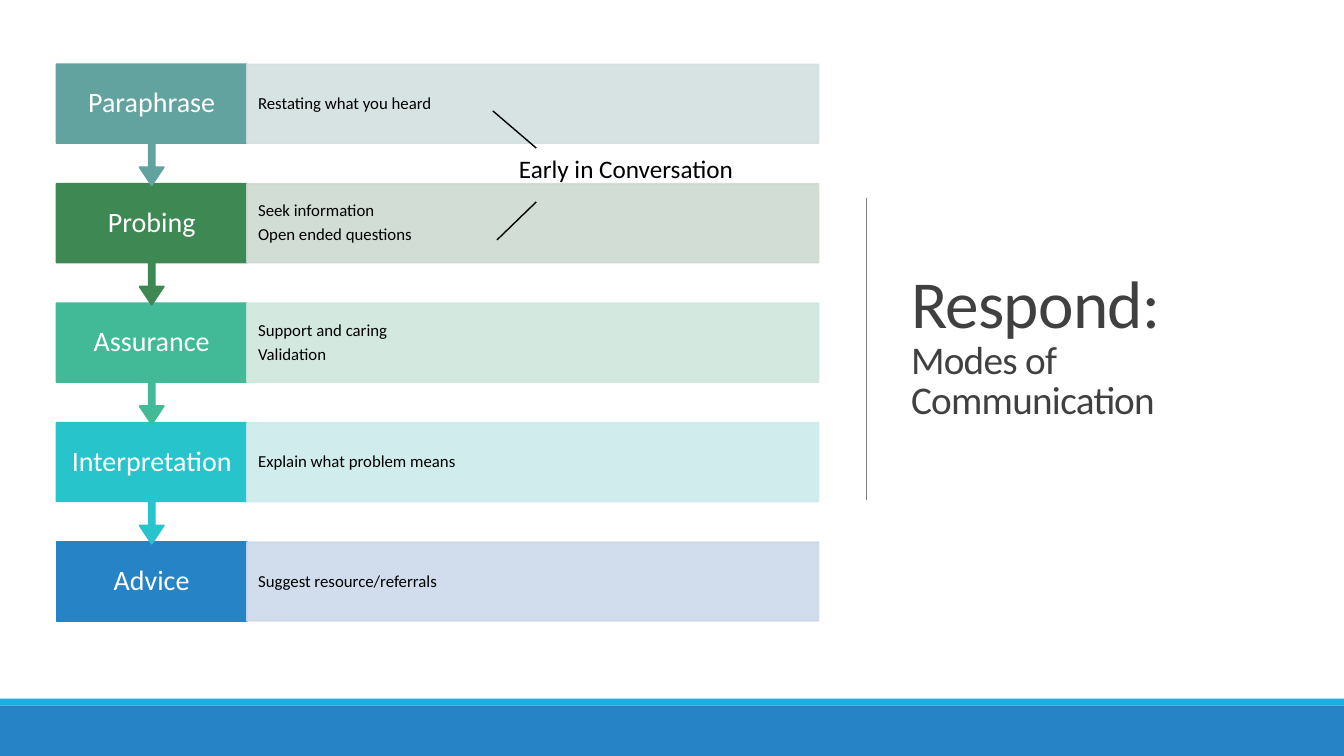
"""Build the slide on modes of communication."""
from lxml import etree
from pptx import Presentation
from pptx import util as u
from pptx.dml import color
from pptx.enum import shapes, text
from pptx.oxml import ns

W, H = 960, 540
FONT = "Calibri"
MODES = [
    ("Paraphrase", ["Restating what you heard"], "62A39F", "D3E0DF"),
    ("Probing", ["Seek information", "Open ended questions"], "3E8853", "CEDAD1"),
    ("Assurance", ["Support and caring", "Validation"], "42BA97", "CFE7DD"),
    ("Interpretation", ["Explain what problem means"], "28C4CC", "CDEAEC"),
    ("Advice", ["Suggest resource/referrals"], "2683C6", "CDD9EA"),
]


def rgb(value):
    """Turn a hex string into a colour."""
    return color.RGBColor.from_string(value)


def add_block(s, kind, box, fill, line=True, alpha=None):
    """Add a filled shape, optionally outlined and translucent."""
    sp = s.shapes.add_shape(kind, *map(u.Pt, box))
    sp.shadow.inherit = False
    sp.fill.solid()
    sp.fill.fore_color.rgb = rgb(fill)
    if line:
        sp.line.color.rgb = rgb(fill)
        sp.line.width = u.Pt(1.25)
    else:
        sp.line.fill.background()
    if alpha:
        for clr in sp._element.spPr.iter(ns.qn("a:srgbClr")):
            etree.SubElement(clr, ns.qn("a:alpha")).set("val", str(alpha * 1000))
    return sp


def add_line(s, start, end, hex_color, width):
    """Draw a straight line between two points."""
    cx = s.shapes.add_connector(
        shapes.MSO_CONNECTOR.STRAIGHT, *map(u.Pt, (*start, *end)))
    cx.line.color.rgb = rgb(hex_color)
    cx.line.width = u.Pt(width)
    etree.SubElement(cx._element.spPr, ns.qn("a:effectLst"))


def add_run(p, content, size, hex_color):
    """Append a formatted run to a paragraph."""
    r = p.add_run()
    r.text = content
    r.font.name = FONT
    r.font.size = u.Pt(size)
    r.font.color.rgb = rgb(hex_color)
    return r


def fill_text(sp, lines, size, hex_color, align, inset_x, inset_y):
    """Write vertically centred paragraphs into a shape."""
    tf = sp.text_frame
    tf.word_wrap = True
    tf.vertical_anchor = text.MSO_ANCHOR.MIDDLE
    tf.margin_left = tf.margin_right = u.Pt(inset_x)
    tf.margin_top = tf.margin_bottom = u.Pt(inset_y)
    for i, content in enumerate(lines):
        p = tf.add_paragraph() if i else tf.paragraphs[0]
        p.alignment = align
        p.line_spacing = 0.9
        p.space_after = u.Pt(size * 0.35)
        add_run(p, content, size, hex_color)


def add_modes(s, x, y, w, h):
    """Stack the modes as labelled callouts with detail bars."""
    label_w, row_h, arrow_h = w / 4, 56.2, 30.2
    pitch = (h - row_h) / (len(MODES) - 1)
    last = len(MODES) - 1
    for i, (label, details, dark, light) in reversed(list(enumerate(MODES))):
        top = y + i * pitch
        if i == last:
            sp = add_block(s, shapes.MSO_SHAPE.RECTANGLE,
                           (x, top, label_w, row_h), dark)
        else:
            sp = add_block(s, shapes.MSO_SHAPE.DOWN_ARROW_CALLOUT,
                           (x, top, label_w, row_h + arrow_h), dark)
            for k, value in enumerate((0.05, 0.1, 0.15, 0.65)):
                sp.adjustments[k] = value
        fill_text(sp, [label], 20, "FFFFFF", text.PP_ALIGN.CENTER, 9.5, 11.4)
        bar = add_block(s, shapes.MSO_SHAPE.RECTANGLE,
                        (x + label_w, top, w - label_w, row_h), light, alpha=90)
        fill_text(bar, details, 12, "000000", text.PP_ALIGN.LEFT, 8, 12)


def add_early_note(s, x, y, w, h):
    """Add the timing note with lines to the first two modes."""
    sp = s.shapes.add_textbox(*map(u.Pt, (x, y, w, h)))
    tf = sp.text_frame
    tf.word_wrap = True
    tf.auto_size = text.MSO_AUTO_SIZE.SHAPE_TO_FIT_TEXT
    add_run(tf.paragraphs[0], "Early in Conversation", 18, "000000")
    add_line(s, (x - 11.6, y - 26.6), (x + 19.5, y), "000000", 1)
    add_line(s, (x + 19.5, y + 38.4), (x - 8.6, y + 65.6), "000000", 1)


def add_title(s, x, y, w, h):
    """Add the two-level title and the rule to its left."""
    sp = s.shapes.add_textbox(*map(u.Pt, (x, y, w, h)))
    tf = sp.text_frame
    tf.word_wrap = True
    tf.vertical_anchor = text.MSO_ANCHOR.MIDDLE
    p = tf.paragraphs[0]
    p.line_spacing = 0.85
    heading = add_run(p, "Respond:", 48, "404040")
    p.add_line_break()
    subheading = add_run(p, "Modes of Communication", 28, "404040")
    for r in (heading, subheading):
        r._r.get_or_add_rPr().set("spc", "-50")
    add_line(s, (x - 25, y + 91.4), (x - 25, y + 307.4), "808080", 0.5)


def add_footer(s, x, y, w, h):
    """Add the footer band with its thin accent strip."""
    strip = 5
    add_block(s, shapes.MSO_SHAPE.RECTANGLE, (x, y, w, strip), "1CADE4", False)
    add_block(s, shapes.MSO_SHAPE.RECTANGLE,
              (x, y + strip, w, h - strip), "2683C6", False)


def main():
    """Create and save the presentation."""
    prs = Presentation()
    prs.slide_width, prs.slide_height = u.Pt(W), u.Pt(H)
    s = prs.slides.add_slide(prs.slide_layouts[6])
    add_title(s, 643.7, 49.7, 265.7, 398.2)
    add_footer(s, 0, 499, W, H - 499)
    add_modes(s, 40.3, 46, 544.4, 397.5)
    add_early_note(s, 363.6, 105.8, 216, 29)
    prs.save("out.pptx")


if __name__ == "__main__":
    main()
